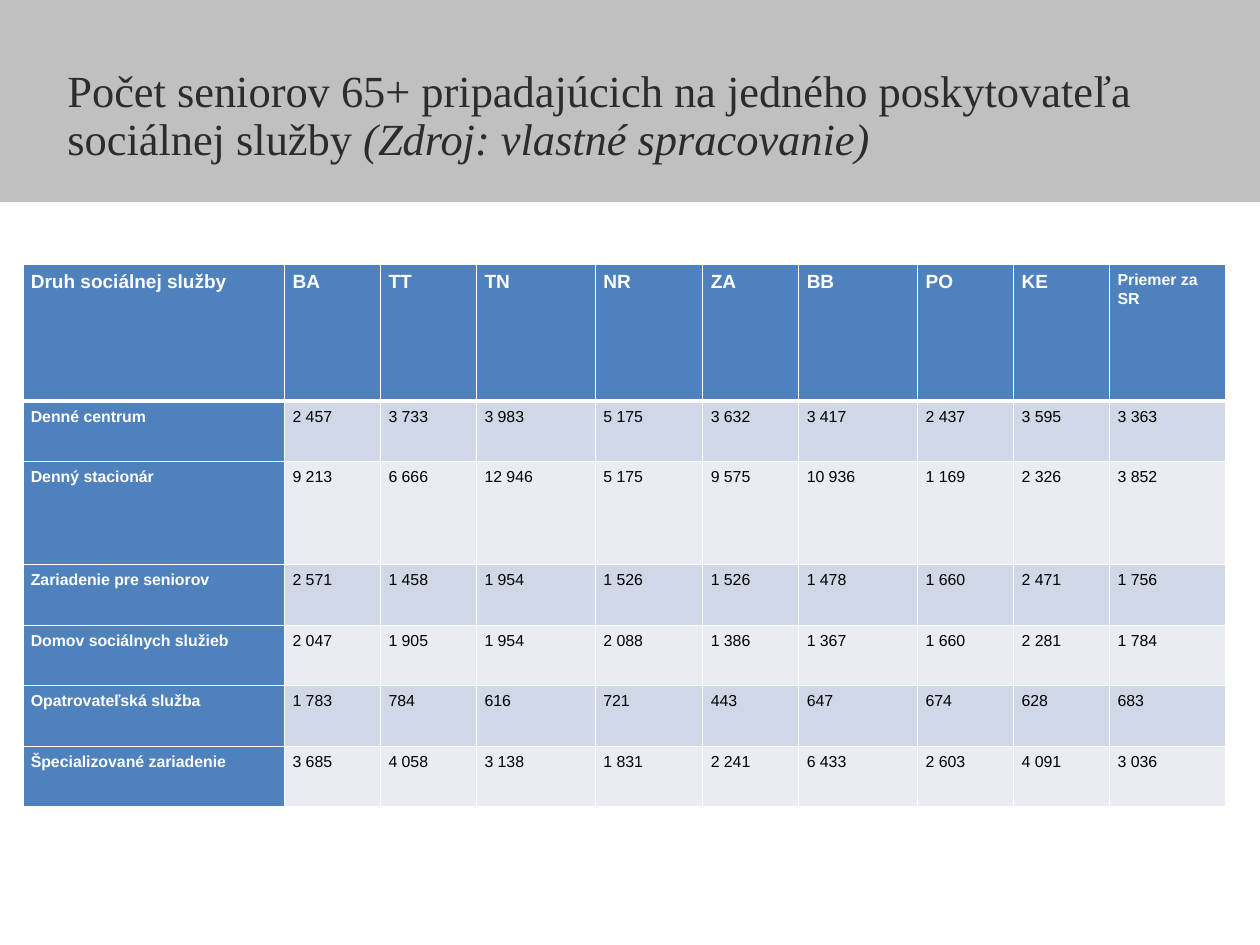
"""Build the slide on seniors aged 65+ per provider of social care."""
from dataclasses import dataclass

from lxml import etree
from pptx import Presentation
from pptx.dml.color import RGBColor
from pptx.enum.shapes import MSO_SHAPE
from pptx.enum.text import MSO_ANCHOR
from pptx.oxml.ns import qn
from pptx.util import Inches, Pt

RECT = MSO_SHAPE.RECTANGLE
MIDDLE = MSO_ANCHOR.MIDDLE
INCH = 2.54
WIDE, HIGH = 28 / INCH, 21 / INCH

TITLE = [
    ("Počet seniorov 65+ pripadajúcich na jedného poskytovateľa sociálnej služby ", False),
    ("(Zdroj: vlastné spracovanie)", True),
]
HEAD = ["Druh sociálnej služby", "BA", "TT", "TN", "NR", "ZA", "BB", "PO", "KE", "Priemer za SR"]
DATA = {
    "Denné centrum": [2457, 3733, 3983, 5175, 3632, 3417, 2437, 3595, 3363],
    "Denný stacionár": [9213, 6666, 12946, 5175, 9575, 10936, 1169, 2326, 3852],
    "Zariadenie pre seniorov": [2571, 1458, 1954, 1526, 1526, 1478, 1660, 2471, 1756],
    "Domov sociálnych služieb": [2047, 1905, 1954, 2088, 1386, 1367, 1660, 2281, 1784],
    "Opatrovateľská služba": [1783, 784, 616, 721, 443, 647, 674, 628, 683],
    "Špecializované zariadenie": [3685, 4058, 3138, 1831, 2241, 6433, 2603, 4091, 3036],
}
WIDTHS = [2.29, 0.84, 0.84, 1.04, 0.94, 0.84, 1.04, 0.84, 0.84, 1.02]
HEIGHTS = [1.2, 0.53, 0.9, 0.53, 0.53, 0.53, 0.53]


@dataclass(frozen=True)
class Theme:
    """Colours, fonts, type sizes and line widths."""
    band: str = "C0C0C0"
    title: str = "2C2C2C"
    key: str = "4F81BD"
    rows: tuple = ("D0D8E7", "E9ECF3")
    white: str = "FFFFFF"
    black: str = "000000"
    serif: str = "Times New Roman"
    sans: str = "Arial"
    large: int = 28
    medium: int = 12
    small: int = 10
    thin: float = 0.96
    thick: float = 3


class Deck:
    """Hold the theme and the current slide, and draw on it."""

    def __init__(self, theme, width, height):
        """Open a deck with one blank slide."""
        self.theme = theme
        self.prs = Presentation()
        self.prs.slide_width, self.prs.slide_height = Inches(width), Inches(height)
        self.slide = self.prs.slides.add_slide(self.prs.slide_layouts[6])

    def style(self, run, face, size, color, bold=False, italic=False):
        """Set the font of a run."""
        font = run.font
        font.name, font.size, font.bold, font.italic = face, Pt(size), bold, italic
        font.color.rgb = RGBColor.from_string(color)

    def band(self, *box):
        """Draw a plain filled bar."""
        bar = self.slide.shapes.add_shape(RECT, *map(Inches, box))
        bar.shadow.inherit = False
        bar.fill.solid()
        bar.fill.fore_color.rgb = RGBColor.from_string(self.theme.band)
        bar.line.fill.background()

    def title(self, parts, *box):
        """Write the heading, set a little below the middle of its box."""
        frame = self.slide.shapes.add_textbox(*map(Inches, box)).text_frame
        frame.word_wrap = True
        frame.vertical_anchor = MIDDLE
        frame.margin_left = frame.margin_right = frame.margin_bottom = 0
        frame.margin_top = Inches(0.28)
        para = frame.paragraphs[0]
        para.line_spacing = 0.9
        for text, italic in parts:
            run = para.add_run()
            run.text = text
            self.style(run, self.theme.serif, self.theme.large, self.theme.title, italic=italic)

    def edge(self, cell, side, width):
        """Draw one white side of a cell."""
        line = etree.SubElement(cell._tc.get_or_add_tcPr(), qn(f"a:ln{side}"), w=str(Pt(width)))
        fill = etree.SubElement(line, qn("a:solidFill"))
        etree.SubElement(fill, qn("a:srgbClr"), val=self.theme.white)

    def cell(self, cell, text, row, col, size):
        """Fill, frame and write one cell."""
        theme = self.theme
        label = row == 0 or col == 0
        heavy = {(0, "B"), (1, "T")}
        for side in "LRTB":
            self.edge(cell, side, theme.thick if (row, side) in heavy else theme.thin)
        cell.fill.solid()
        cell.fill.fore_color.rgb = RGBColor.from_string(
            theme.key if label else theme.rows[(row - 1) % 2])
        cell.margin_left = cell.margin_right = Inches(0.07)
        cell.margin_top = cell.margin_bottom = Inches(0.05)
        cell.text_frame.text = text
        para = cell.text_frame.paragraphs[0]
        para.line_spacing, para.space_after = 1.07, Pt(8)
        self.style(para.runs[0], theme.sans, size, theme.white if label else theme.black, label)

    def table(self, rows, widths, heights, left, top):
        """Draw the table from rows of text."""
        box = map(Inches, (left, top, sum(widths), sum(heights)))
        grid = self.slide.shapes.add_table(len(rows), len(widths), *box).table
        for column, width in zip(grid.columns, widths):
            column.width = Inches(width)
        for line, height in zip(grid.rows, heights):
            line.height = Inches(height)
        for row, texts in enumerate(rows):
            for col, text in enumerate(texts):
                large = row == 0 and col < len(widths) - 1
                size = self.theme.medium if large else self.theme.small
                self.cell(grid.cell(row, col), text, row, col, size)


def main():
    """Build and save the deck."""
    deck = Deck(Theme(), WIDE, HIGH)
    deck.band(0, 0, WIDE, 1.77)
    deck.title(TITLE, 0.59, 0.2, 9.84, 1.37)
    body = [[name, *(f"{num:,}".replace(",", " ") for num in nums)] for name, nums in DATA.items()]
    deck.table([HEAD, *body], WIDTHS, HEIGHTS, 0.2, 2.31)
    deck.prs.save("out.pptx")


if __name__ == "__main__":
    main()
